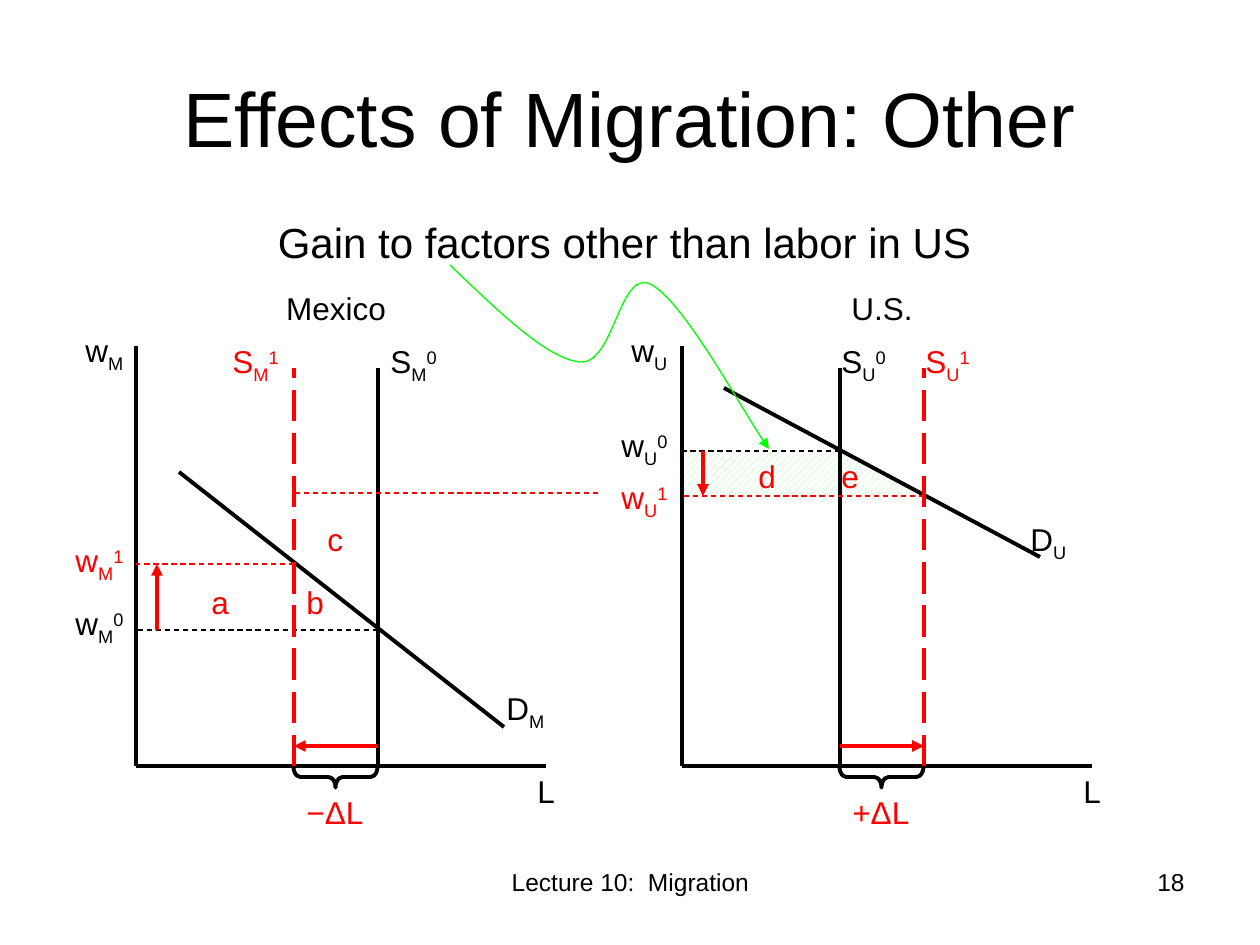
from pptx import Presentation
from pptx.dml.color import RGBColor
from pptx.enum.dml import MSO_LINE, MSO_PATTERN
from pptx.enum.shapes import MSO_CONNECTOR, MSO_SHAPE
from pptx.enum.text import MSO_ANCHOR, MSO_AUTO_SIZE, PP_ALIGN
from pptx.oxml.ns import qn
from pptx.util import Pt
from lxml.etree import SubElement

SCALE = 914400 / 126  # EMU in one px


class Theme:
    font = "Arial"
    black, red = RGBColor(0, 0, 0), RGBColor(255, 0, 0)
    green, mint = RGBColor(0, 255, 0), RGBColor(0x99, 255, 0x99)
    white = RGBColor(255, 255, 255)
    title, subtitle, label, footer = 44, 24, 18, 14
    thick, thin = 2.25, 0.75


# A label is (text, subscript, superscript); wages and supplies go old, new.
PANELS = [
    dict(name="Mexico", sub="M", origin=136, supply=(378, 294), wage=(630, 564),
         demand=(179, 472, 504, 727), demand_label=(494, 683),
         supply_labels=(378, 220), wage_labels=(598, 535), change="−ΔL"),
    dict(name="U.S.", sub="U", origin=682, supply=(840, 924), wage=(451, 496),
         demand=(724, 388, 1040, 557), demand_label=(1018, 514),
         supply_labels=(829, 913), wage_labels=(420, 472), change="+ΔL"),
]
AREAS = [("a", 199, 577), ("b", 294, 577), ("c", 315, 514),
         ("d", 746, 451), ("e", 829, 451)]
AXIS_TOP, AXIS_BOTTOM, AXIS_LENGTH, SUPPLY_TOP = 346, 766, 410, 368
MIGRATION_Y = 746

# Bezier outlines: the start, then two handles and an end for each curve.
GAIN_AREA = [(683, 450), (762, 451), (759, 452), (842, 451),
             (881, 474), (868, 465), (925, 496),
             (798, 496), (781, 496), (683, 496),
             (683, 469), (682, 486), (683, 450)]
POINTER = [(450, 265), (498, 311), (547, 359), (580, 362),
           (614, 365), (619, 270), (650, 284),
           (682, 299), (748, 421), (769, 449)]


def px(*values):
    return [round(value * SCALE) for value in values]


def add_spans(para, parts, size, color):
    """Add text, subscript and superscript as separate runs."""
    for text, baseline in zip(parts, (None, "-25000", "30000")):
        span = para.add_run()
        span.text = text
        span.font.name, span.font.size = Theme.font, Pt(size)
        span.font.color.rgb = color
        if baseline:
            span._r.get_or_add_rPr().set("baseline", baseline)


def add_label(page, parts, x, y, width, color=Theme.black, size=Theme.label,
              align=PP_ALIGN.LEFT, height=50):
    box = page.shapes.add_textbox(*px(x, y, width, height))
    box.text_frame.word_wrap = True
    box.text_frame.auto_size = MSO_AUTO_SIZE.SHAPE_TO_FIT_TEXT
    para = box.text_frame.paragraphs[0]
    para.alignment = align
    add_spans(para, parts, size, color)


def style_line(shape, color, width, dash=None, arrow=False):
    shape.line.color.rgb = color
    shape.line.width = Pt(width)
    if dash:
        shape.line.dash_style = dash
    if arrow:
        SubElement(shape.line._get_or_add_ln(), qn("a:tailEnd"), type="triangle")


def add_line(page, x1, y1, x2, y2, color=Theme.black, width=Theme.thick, **style):
    line = page.shapes.add_connector(MSO_CONNECTOR.STRAIGHT, *px(x1, y1, x2, y2))
    style_line(line, color, width, **style)
    SubElement(line._element.spPr, qn("a:effectLst"))


def add_curve(page, points, close):
    """Build a freeform, then join each three segments into one Bezier curve."""
    builder = page.shapes.build_freeform(*points[0], scale=SCALE)
    builder.add_line_segments(points[1:], close=close)
    shape = builder.convert_to_shape()
    shape.shadow.inherit = False
    segments = list(shape._element.iter(qn("a:lnTo")))
    for first, second, third in zip(*[iter(segments)] * 3):
        first.tag = qn("a:cubicBezTo")
        for segment in (second, third):
            first.append(segment[0])
            segment.getparent().remove(segment)
    return shape


def add_panel(page, panel):
    left, sub = panel["origin"], panel["sub"]
    add_line(page, left, AXIS_TOP, left, AXIS_BOTTOM)
    add_line(page, left, AXIS_BOTTOM, left + AXIS_LENGTH, AXIS_BOTTOM)
    add_label(page, [panel["name"]], left + 95, 283, 210, align=PP_ALIGN.CENTER)
    add_label(page, ["w", sub], left - 63, 325, 94)
    add_label(page, ["L"], left + 389, 766, 63)
    add_line(page, *panel["demand"])
    add_label(page, ["D", sub], *panel["demand_label"], 84)

    colors, dashes = (Theme.black, Theme.red), (None, MSO_LINE.LONG_DASH)
    for period, (color, dash) in enumerate(zip(colors, dashes)):
        supply, wage = panel["supply"][period], panel["wage"][period]
        add_line(page, supply, AXIS_BOTTOM, supply, SUPPLY_TOP, color, dash=dash)
        add_line(page, supply, wage, left, wage, color, Theme.thin,
                 dash=MSO_LINE.DASH)
        add_label(page, ["S", sub, str(period)],
                  panel["supply_labels"][period], 336, 84, color)
        add_label(page, ["w", sub, str(period)],
                  left - 73, panel["wage_labels"][period], 105, color)

    old, new = panel["supply"]
    add_line(page, old, MIGRATION_Y, new, MIGRATION_Y, Theme.red, arrow=True)
    old, new = panel["wage"]
    add_line(page, left + 21, old, left + 21, new, Theme.red, arrow=True)

    brace = page.shapes.add_shape(MSO_SHAPE.LEFT_BRACE,
                                  *px(left + 189, 735, 21, 84))
    brace.rotation = 270
    brace.adjustments[0] = 0.33
    brace.shadow.inherit = False
    brace.fill.background()
    style_line(brace, Theme.black, Theme.thick)
    add_label(page, [panel["change"]], left + 158, 787, 84, Theme.red)


def main():
    deck = Presentation()
    deck.slide_width, deck.slide_height = px(1260, 945)
    page = deck.slides.add_slide(deck.slide_layouts[5])

    title = page.shapes.title
    title.left, title.top, title.width, title.height = px(63, 38, 1134, 157)
    title.text_frame.vertical_anchor = MSO_ANCHOR.MIDDLE
    para = title.text_frame.paragraphs[0]
    para.alignment = PP_ALIGN.CENTER
    add_spans(para, ["Effects of Migration: Other"], Theme.title, Theme.black)

    gain = add_curve(page, GAIN_AREA, close=True)
    gain.fill.patterned()
    gain.fill.pattern = MSO_PATTERN.WIDE_UPWARD_DIAGONAL
    gain.fill.fore_color.rgb, gain.fill.back_color.rgb = Theme.mint, Theme.white
    gain.line.fill.background()

    for panel in PANELS:
        add_panel(page, panel)
    for letter, x, y in AREAS:
        add_label(page, [letter], x, y, 63, Theme.red)
    add_line(page, 598, 493, 294, 493, Theme.red, Theme.thin, dash=MSO_LINE.DASH)

    add_label(page, ["Gain to factors other than labor in US"], 262, 210, 725,
              size=Theme.subtitle, align=PP_ALIGN.CENTER, height=63)
    pointer = add_curve(page, POINTER, close=False)
    pointer.fill.background()
    style_line(pointer, Theme.green, Theme.thin, arrow=True)

    add_label(page, ["Lecture 10:  Migration"], 431, 861, 399,
              size=Theme.footer, align=PP_ALIGN.CENTER, height=66)
    add_label(page, ["18"], 903, 861, 294,
              size=Theme.footer, align=PP_ALIGN.RIGHT, height=66)
    deck.save("out.pptx")


if __name__ == "__main__":
    main()
